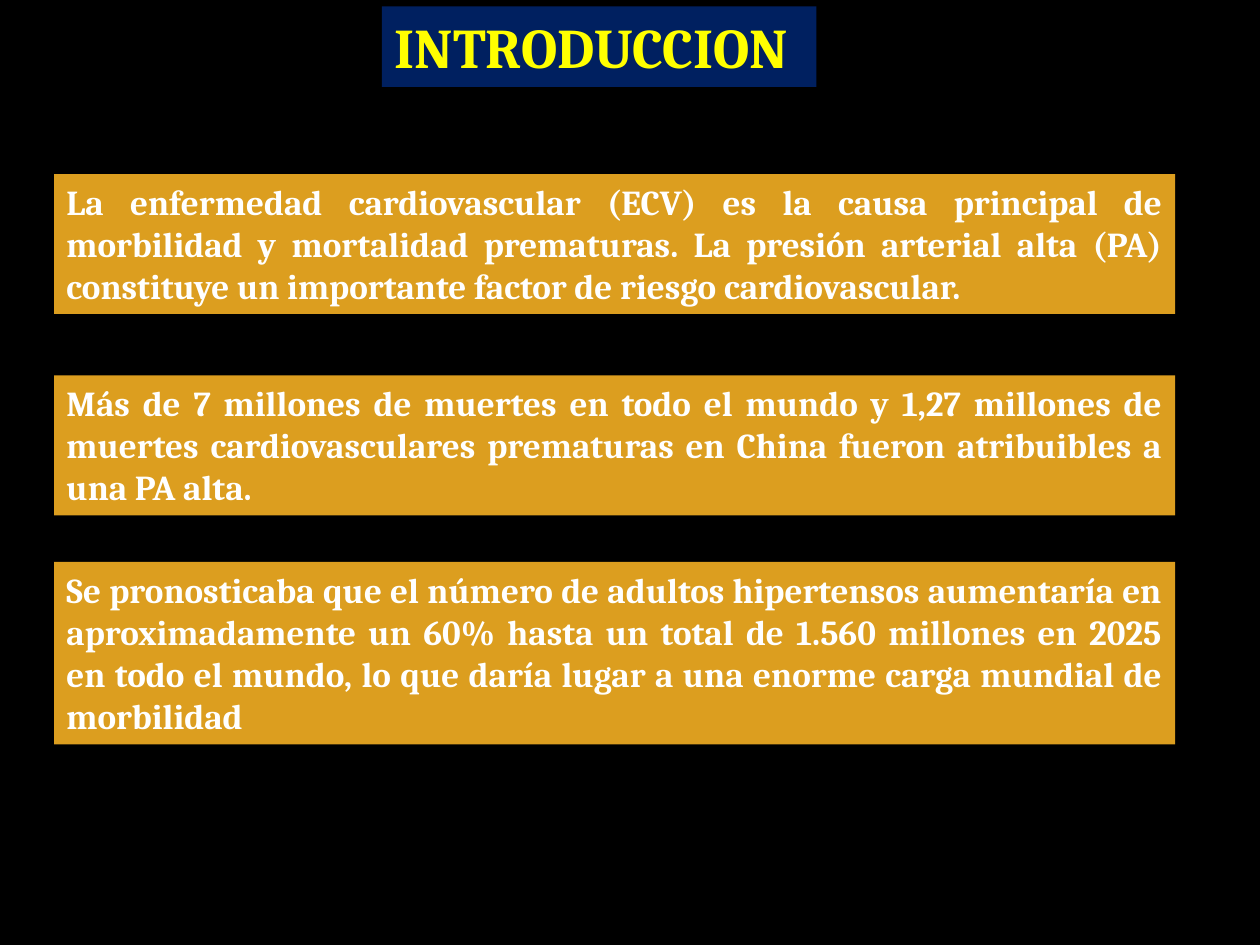
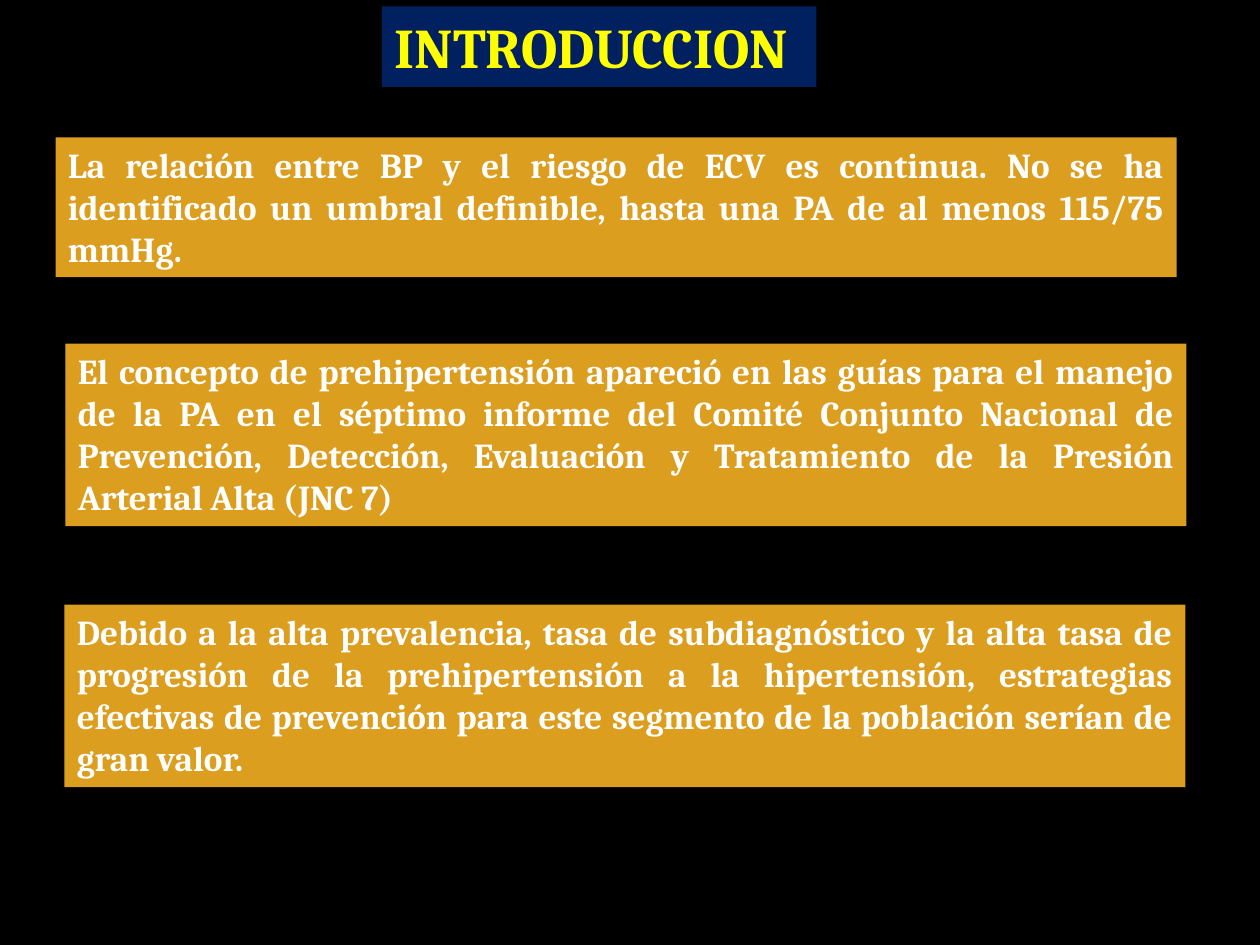
"""Build the two introduction slides on hypertension and cardiovascular risk."""
import pptx
import pptx.dml.color
import pptx.enum.text
import pptx.util

Cm = pptx.util.Cm
RGBColor = pptx.dml.color.RGBColor
Align = pptx.enum.text.PP_ALIGN
AutoSize = pptx.enum.text.MSO_AUTO_SIZE

BLACK = RGBColor(0x00, 0x00, 0x00)
NAVY = RGBColor(0x00, 0x20, 0x60)
YELLOW = RGBColor(0xFF, 0xFF, 0x00)
GOLD = RGBColor(0xDC, 0x9E, 0x1F)
WHITE = RGBColor(0xFF, 0xFF, 0xFF)

TITLE = "INTRODUCCION"
THREE_LINES = 2.82
FOUR_LINES = 3.68

SLIDES = [
    [
        (1.09, 3.51, THREE_LINES,
         "La enfermedad cardiovascular (ECV) es la causa principal de morbilidad y mortalidad "
         "prematuras. La presión arterial alta (PA) constituye un importante factor de riesgo "
         "cardiovascular."),
        (1.09, 7.57, THREE_LINES,
         "Más de 7 millones de muertes en todo el mundo y 1,27 millones de muertes "
         "cardiovasculares prematuras en China fueron atribuibles a una PA alta."),
        (1.09, 11.33, FOUR_LINES,
         "Se pronosticaba que el número de adultos hipertensos aumentaría en aproximadamente "
         "un 60% hasta un total de 1.560 millones en 2025 en todo el mundo, lo que daría lugar "
         "a una enorme carga mundial de morbilidad"),
    ],
    [
        (1.12, 2.77, THREE_LINES,
         "La relación entre BP y el riesgo de ECV es continua. No se ha identificado un umbral "
         "definible, hasta una PA de al menos 115/75 mmHg."),
        (1.32, 6.93, FOUR_LINES,
         "El concepto de prehipertensión apareció en las guías para el manejo de la PA en el "
         "séptimo informe del Comité Conjunto Nacional de Prevención, Detección, Evaluación y "
         "Tratamiento de la Presión Arterial Alta (JNC 7)"),
        (1.3, 12.19, FOUR_LINES,
         "Debido a la alta prevalencia, tasa de subdiagnóstico y la alta tasa de progresión de "
         "la prehipertensión a la hipertensión, estrategias efectivas de prevención para este "
         "segmento de la población serían de gran valor."),
    ],
]


class Deck:
    """Holds the shared style and the current slide."""

    font_name = "Cambria"
    title_size = pptx.util.Pt(32)
    body_size = pptx.util.Pt(20)
    statement_width = Cm(22.6)

    def __init__(self):
        self.presentation = pptx.Presentation()
        self.presentation.slide_width = Cm(25.4)
        self.presentation.slide_height = Cm(19.05)
        self.slide = None

    def add_slide(self):
        title_only = self.presentation.slide_layouts[5]
        self.slide = self.presentation.slides.add_slide(title_only)
        fill = self.slide.background.fill
        fill.solid()
        fill.fore_color.rgb = BLACK

    def fill_with_text(self, shape, text, size, color, fill_color, alignment, auto_size):
        shape.fill.solid()
        shape.fill.fore_color.rgb = fill_color
        text_frame = shape.text_frame
        text_frame.text = text
        text_frame.word_wrap = True
        text_frame.auto_size = auto_size
        text_frame.vertical_anchor = pptx.enum.text.MSO_ANCHOR.TOP
        paragraph = text_frame.paragraphs[0]
        paragraph.alignment = alignment
        for run in paragraph.runs:
            run.font.name = self.font_name
            run.font.size = size
            run.font.bold = True
            run.font.color.rgb = color

    def title(self, text):
        shape = self.slide.shapes.title
        shape.left, shape.top = Cm(7.7), Cm(0.13)
        shape.width, shape.height = Cm(8.76), Cm(1.62)
        self.fill_with_text(shape, text, self.title_size, YELLOW, NAVY, Align.LEFT,
                            AutoSize.NONE)

    def statement(self, left, top, height, text):
        shape = self.slide.shapes.add_textbox(
            Cm(left), Cm(top), self.statement_width, Cm(height))
        self.fill_with_text(shape, text, self.body_size, WHITE, GOLD, Align.JUSTIFY,
                            AutoSize.SHAPE_TO_FIT_TEXT)


def main():
    deck = Deck()
    for statements in SLIDES:
        deck.add_slide()
        deck.title(TITLE)
        for statement in statements:
            deck.statement(*statement)
    deck.presentation.save("out.pptx")


if __name__ == "__main__":
    main()
